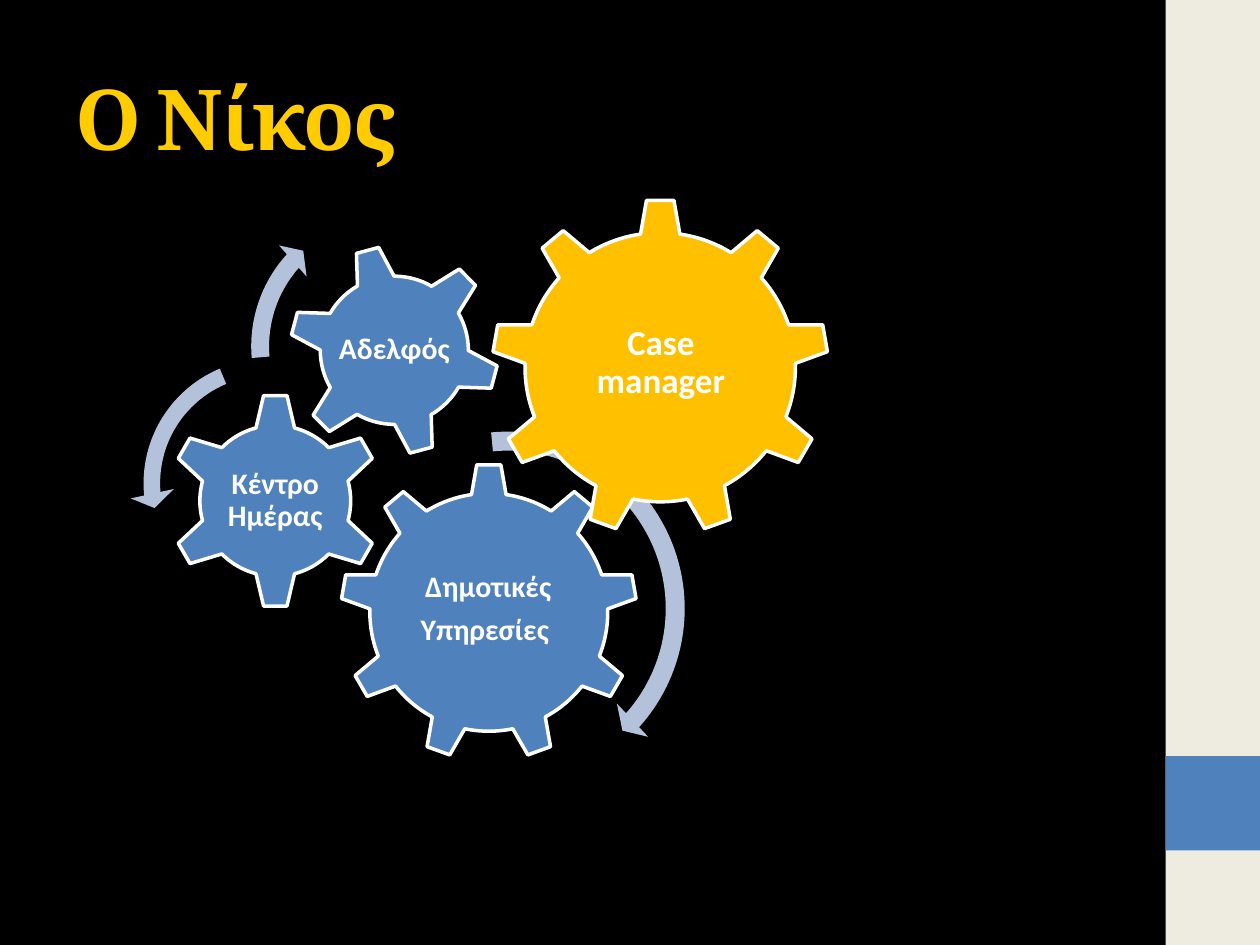
from pptx import Presentation
from pptx.dml.color import RGBColor
from pptx.enum.shapes import MSO_SHAPE as Shape
from pptx.enum.text import MSO_ANCHOR as Anchor, PP_ALIGN as Align
from pptx.util import Emu, Pt

PX = 9144  # EMU per px, 100 px to the inch

BLACK = RGBColor(0x00, 0x00, 0x00)
WHITE = RGBColor(0xFF, 0xFF, 0xFF)
CREAM = RGBColor(0xEE, 0xEC, 0xE1)
BLUE = RGBColor(0x4F, 0x81, 0xBD)
PALE_BLUE = RGBColor(0xB3, 0xC1, 0xDB)
GOLD = RGBColor(0xFF, 0xC0, 0x00)
YELLOW = RGBColor(0xFF, 0xCC, 0x00)

TITLE = "Ο Νίκος"
TITLE_AREA = (50, 30, 833, 125)

SIDEBAR = [((925, 0, 75, 750), CREAM), ((925, 600, 75, 75), BLUE)]

# kind, area, rotation, fill, label lines, label area, text size
SERVICE_GEARS = [
    (Shape.GEAR_9, (270, 368, 236, 236), 0, BLUE,
     ["Δημοτικές", "Υπηρεσίες "], (317, 423, 141, 121), 17),
    (Shape.GEAR_6, (133, 312, 171, 171), 0, BLUE,
     ["Κέντρο Ημέρας"], (176, 355, 85, 85), 17),
    (Shape.GEAR_6, (229, 194, 168, 168), 345, BLUE,
     ["Αδελφός"], (266, 231, 94, 94), 17),
]
MANAGER_GEARS = [
    (Shape.GEAR_9, (390, 158, 268, 267), 0, GOLD,
     ["Case manager"], (444, 220, 161, 137), 20),
]

# kind, area, adjustments
ARROWS = [
    (Shape.CIRCULAR_ARROW, (252, 332, 302, 302),
     (0.05, 2.99, 25.09, 158.76, 0.06)),
    (Shape.LEFT_CIRCULAR_ARROW, (103, 274, 219, 219),
     (0.06, 4.3, 104.89, 148.38, 0.08)),
    (Shape.CIRCULAR_ARROW, (190, 157, 236, 236),
     (0.06, 3.94, 133.14, 105.08, 0.07)),
]


def emu(area):
    return [Emu(length * PX) for length in area]


def add_span(para, text, font, size, color):
    span = para.add_run()
    span.text = text
    span.font.name = font
    span.font.size = Pt(size)
    span.font.bold = True
    span.font.color.rgb = color
    return span


def add_filled(shapes, kind, area, fill):
    shape = shapes.add_shape(kind, *emu(area))
    shape.shadow.inherit = False
    shape.fill.solid()
    shape.fill.fore_color.rgb = fill
    shape.line.fill.background()
    return shape


def add_label(shapes, lines, area, size):
    frame = shapes.add_textbox(*emu(area)).text_frame
    frame.word_wrap = True
    frame.vertical_anchor = Anchor.MIDDLE
    frame.margin_left = frame.margin_right = Emu(2 * PX)
    frame.margin_top = frame.margin_bottom = Emu(2 * PX)
    for i, line in enumerate(lines):
        para = frame.add_paragraph() if i else frame.paragraphs[0]
        para.alignment = Align.CENTER
        para.line_spacing = 0.9
        para.space_after = Pt(6)
        add_span(para, line, "Calibri", size, WHITE)


def add_gears(shapes, gears):
    for kind, area, rotation, fill, lines, label_area, size in gears:
        gear = add_filled(shapes, kind, area, fill)
        gear.rotation = rotation
        gear.line.color.rgb = WHITE
        gear.line.width = Pt(2)
        add_label(shapes, lines, label_area, size)


def main():
    deck = Presentation()
    deck.slide_width, deck.slide_height = emu((1000, 750))
    page = deck.slides.add_slide(deck.slide_layouts[5])
    page.background.fill.solid()
    page.background.fill.fore_color.rgb = BLACK

    # Sidebar
    for area, fill in SIDEBAR:
        add_filled(page.shapes, Shape.RECTANGLE, area, fill)

    # Title
    title = page.shapes.title
    title.left, title.top, title.width, title.height = emu(TITLE_AREA)
    title.text_frame.vertical_anchor = Anchor.MIDDLE
    para = title.text_frame.paragraphs[0]
    para.alignment = Align.LEFT
    span = add_span(para, TITLE, "Cambria", 48, YELLOW)
    span.font._element.set("spc", "-100")

    # Service gears with their turning arrows
    services = page.shapes.add_group_shape().shapes
    add_gears(services, SERVICE_GEARS)
    for kind, area, adjustments in ARROWS:
        arrow = add_filled(services, kind, area, PALE_BLUE)
        for i, value in enumerate(adjustments):
            arrow.adjustments[i] = value

    # Case manager gear
    add_gears(page.shapes.add_group_shape().shapes, MANAGER_GEARS)

    deck.save("out.pptx")


if __name__ == "__main__":
    main()
